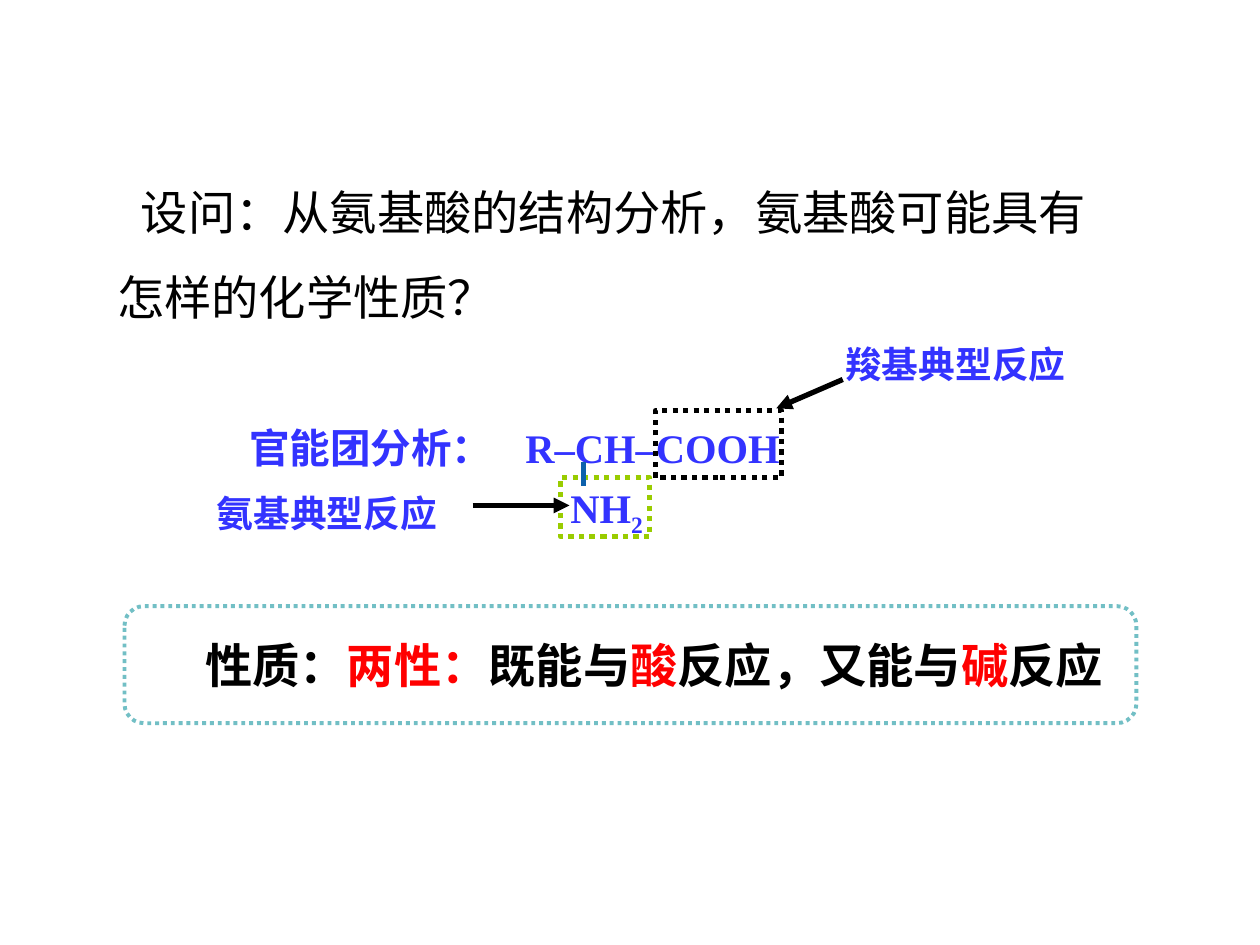
from dataclasses import dataclass

from lxml import etree
from pptx import Presentation
from pptx.dml.color import RGBColor
from pptx.enum import dml, shapes, text
from pptx.oxml import ns
from pptx.util import Cm, Pt


@dataclass(frozen=True)
class Theme:
    black: RGBColor = RGBColor(0, 0, 0)
    red: RGBColor = RGBColor(255, 0, 0)
    blue: RGBColor = RGBColor.from_string("3333FF")
    bond: RGBColor = RGBColor.from_string("0D61AC")
    green: RGBColor = RGBColor.from_string("99CC00")
    teal: RGBColor = RGBColor.from_string("72BFC5")
    serif: str = "Times New Roman"
    sans: str = "Arial"
    main_size: float = 27
    formula_size: float = 23.2
    label_size: float = 21
    heavy_line: float = 3
    frame_line: float = 2.25


theme = Theme()


def set_font(font, name, size, color, bold):
    font.name = name
    font.size = Pt(size)
    font.bold = bold
    font.color.rgb = color


def set_margins(frame):
    frame.margin_left = frame.margin_right = Cm(0.2)
    frame.margin_top = frame.margin_bottom = Cm(0.1)


prs = Presentation()
prs.slide_width, prs.slide_height = Cm(25.4), Cm(19.05)
slide = prs.slides.add_slide(prs.slide_layouts[5])

question = slide.shapes.title
question.left, question.top = Cm(2.16), Cm(3.02)
question.width, question.height = Cm(20.65), Cm(3.68)
frame = question.text_frame
frame.text = "设问：从氨基酸的结构分析，氨基酸可能具有怎样的化学性质？"
frame.word_wrap = True
frame.auto_size = text.MSO_AUTO_SIZE.NONE
frame.vertical_anchor = text.MSO_ANCHOR.TOP
set_margins(frame)
paragraph = frame.paragraphs[0]
paragraph.alignment = text.PP_ALIGN.LEFT
paragraph.line_spacing = 1.5
paragraph.space_before = Pt(5.4)
paragraph._p.get_or_add_pPr().set("indent", str(Cm(0.48)))
set_font(paragraph.font, theme.serif, theme.main_size, theme.black, False)

labels = [
    ("R–CH–COOH", "", theme.formula_size, (10.39, 8.43, 5.59, 1.19)),
    ("NH", "2", theme.formula_size, (11.3, 9.63, 1.93, 1.19)),
    ("官能团分析：", "", theme.formula_size, (4.83, 8.43, 5.69, 1.19)),
    ("氨基典型反应", "", theme.label_size, (4.17, 9.8, 4.88, 1.12)),
    ("羧基典型反应", "", theme.label_size, (16.84, 6.78, 4.88, 1.12)),
]
for wording, subscript, size, place in labels:
    label = slide.shapes.add_textbox(*map(Cm, place))
    frame = label.text_frame
    frame.word_wrap = False
    set_margins(frame)
    paragraph = frame.paragraphs[0]
    paragraph.add_run().text = wording
    if subscript:
        index = paragraph.add_run()
        index.text = subscript
        index._r.get_or_add_rPr().set("baseline", "-25000")
    set_font(paragraph.font, theme.serif, size, theme.blue, True)

rectangle = shapes.MSO_SHAPE.RECTANGLE
rounded = shapes.MSO_SHAPE.ROUNDED_RECTANGLE
outlines = [
    (rectangle, theme.green, theme.heavy_line, (11.3, 9.63, 1.8, 1.19)),
    (rectangle, theme.black, theme.heavy_line, (13.21, 8.28, 2.54, 1.35)),
    (rounded, theme.teal, theme.frame_line, (2.51, 12.22, 20.4, 2.36)),
]
for kind, color, width, place in outlines:
    outline = slide.shapes.add_shape(kind, *map(Cm, place))
    outline.shadow.inherit = False
    outline.fill.background()
    outline.line.color.rgb = color
    outline.line.width = Pt(width)
    outline.line.dash_style = dml.MSO_LINE.ROUND_DOT

conclusion = outline.text_frame
conclusion.word_wrap = True
conclusion.margin_left = Cm(1.2)
conclusion.vertical_anchor = text.MSO_ANCHOR.MIDDLE
paragraph = conclusion.paragraphs[0]
paragraph.alignment = text.PP_ALIGN.CENTER
for wording, color in [
    ("性质：", theme.black),
    ("两性：", theme.red),
    ("既能与", theme.black),
    ("酸", theme.red),
    ("反应，又能与", theme.black),
    ("碱", theme.red),
    ("反应", theme.black),
]:
    part = paragraph.add_run()
    part.text = wording
    set_font(part.font, theme.sans, theme.main_size, color, True)

links = [
    (theme.bond, False, (11.76, 9.32, 11.76, 9.8)),
    (theme.black, True, (9.53, 10.19, 11.48, 10.19)),
    (theme.black, True, (16.99, 7.65, 15.65, 8.23)),
]
for color, has_arrow, ends in links:
    link = slide.shapes.add_connector(shapes.MSO_CONNECTOR.STRAIGHT, *map(Cm, ends))
    link.line.color.rgb = color
    link.line.width = Pt(theme.heavy_line)
    if has_arrow:
        etree.SubElement(link.line._get_or_add_ln(), ns.qn("a:tailEnd"), type="triangle")
    etree.SubElement(link._element.spPr, ns.qn("a:effectLst"))

prs.save("out.pptx")
